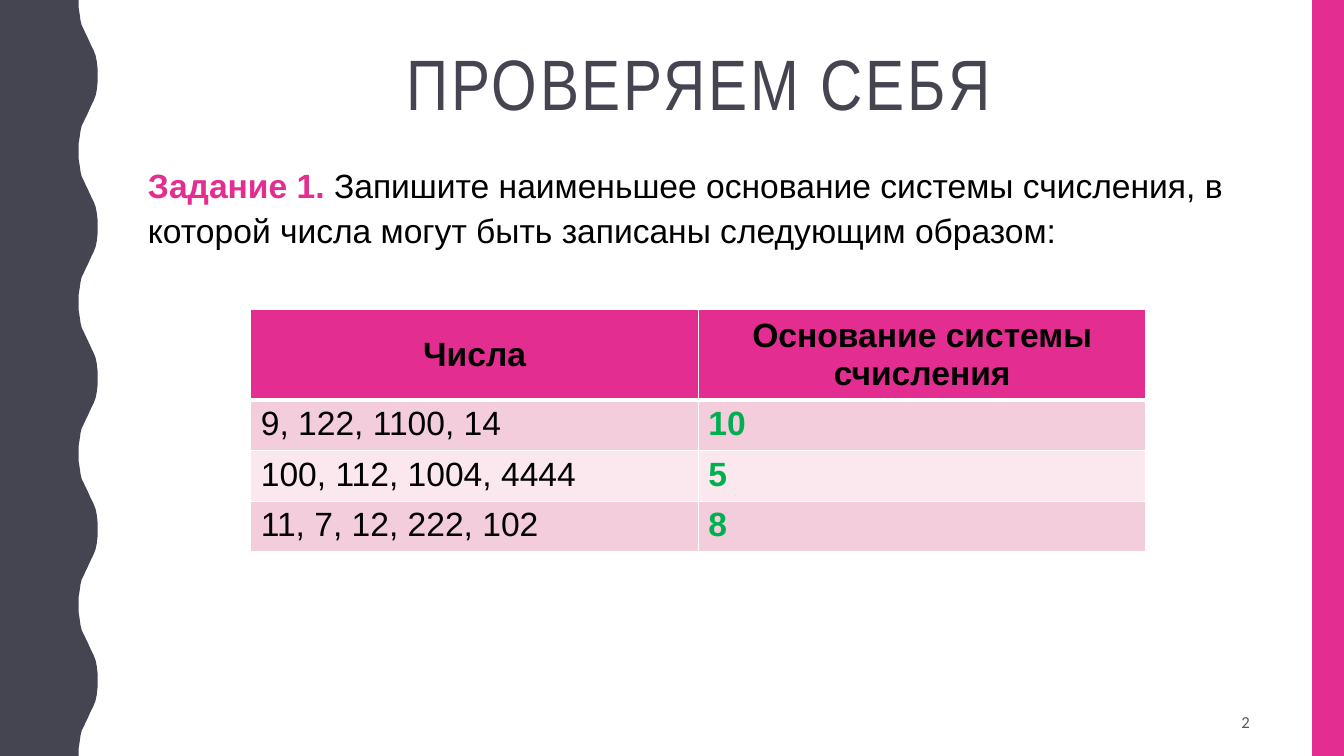
from lxml import etree
from pptx import Presentation
from pptx.dml.color import RGBColor
from pptx.enum.shapes import MSO_SHAPE
from pptx.enum.text import MSO_ANCHOR, PP_ALIGN
from pptx.oxml.ns import qn
from pptx.util import Cm, Pt

RECT = MSO_SHAPE.RECTANGLE
TOP, MIDDLE = MSO_ANCHOR.TOP, MSO_ANCHOR.MIDDLE
LEFT, CENTER, RIGHT = PP_ALIGN.LEFT, PP_ALIGN.CENTER, PP_ALIGN.RIGHT
DARK = RGBColor(0x45, 0x45, 0x51)
PINK = RGBColor(0xE3, 0x2D, 0x91)
PALE = RGBColor(0xF4, 0xCD, 0xDC)
PALER = RGBColor(0xFA, 0xE8, 0xEE)
GREEN = RGBColor(0x00, 0xB0, 0x50)
GRAY = RGBColor(0x59, 0x59, 0x59)
BLACK = RGBColor(0, 0, 0)


def add_run(p, text, size, color, font="Arial", bold=False):
    r = p.add_run()
    r.text = text
    for name, value in {"size": Pt(size), "name": font, "bold": bold}.items():
        setattr(r.font, name, value)
    r.font.color.rgb = color
    return r


def add_text(left, top, width, height, anchor, align):
    tf = s.shapes.add_textbox(Cm(left), Cm(top), Cm(width), Cm(height)).text_frame
    tf.word_wrap = True
    tf.vertical_anchor = anchor
    p = tf.paragraphs[0]
    p.alignment = align
    return p


prs = Presentation()
prs.slide_width, prs.slide_height = Cm(33.87), Cm(19.05)
s = prs.slides.add_slide(prs.slide_layouts[6])

WAVE = 3.81
rise = [(1.98, 0), (1.98, 0.18), (2.01, 0.36), (2.03, 0.51), (2.06, 0.64),
        (2.11, 0.74), (2.16, 0.85), (2.21, 0.95), (2.26, 1.06), (2.31, 1.17),
        (2.36, 1.27), (2.41, 1.4), (2.44, 1.55), (2.46, 1.73), (2.46, 1.9)]
crest = rise + [(x, WAVE - y) for x, y in reversed(rise)]
edge = [(Cm(x), Cm(y + i * WAVE)) for i in range(5) for x, y in crest]
builder = s.shapes.build_freeform(0, 0)
builder.add_line_segments(edge + [(0, prs.slide_height)], close=True)
wave = builder.convert_to_shape()
stripe = s.shapes.add_shape(RECT, Cm(33.07), 0, Cm(0.8), prs.slide_height)
for sp, color in ((wave, DARK), (stripe, PINK)):
    sp.shadow.inherit = False
    sp.fill.solid()
    sp.fill.fore_color.rgb = color
    sp.line.fill.background()

p = add_text(3.48, 1.07, 28.27, 2.24, MIDDLE, CENTER)
p.line_spacing = 0.9
r = add_run(p, "ПРОВЕРЯЕМ СЕБЯ", 51, DARK, "Arial Narrow")
r.font._element.set("spc", "200")

p = add_text(3.48, 3.94, 28.27, 2.31, TOP, LEFT)
p.line_spacing = 1.1
p.space_before = Pt(7)
add_run(p, "Задание 1. ", 24, PINK, bold=True)
add_run(p, "Запишите наименьшее основание системы счисления, "
           "в которой числа могут быть записаны следующим образом:", 24, BLACK)

rows = [("Числа", "Основание системы счисления"),
        ("9, 122, 1100, 14", "10"),
        ("100, 112, 1004, 4444", "5"),
        ("11, 7, 12, 222, 102", "8")]
table = s.shapes.add_table(4, 2, Cm(6.32), Cm(7.8), Cm(22.56), Cm(5.72)).table
for i, row in enumerate(rows):
    header = i == 0
    table.rows[i].height = Cm(2.12 if header else 1.2)
    for j, text in enumerate(row):
        cell = table.cell(i, j)
        cell.vertical_anchor = MIDDLE if header else TOP
        cell.fill.solid()
        cell.fill.fore_color.rgb = PINK if header else PALE if i % 2 else PALER
        p = cell.text_frame.paragraphs[0]
        p.alignment = CENTER if header else LEFT
        answer = j == 1 and not header
        add_run(p, text, 24, GREEN if answer else BLACK, bold=header or answer)
        tcPr = cell._tc.get_or_add_tcPr()
        for k, side in enumerate(("lnL", "lnR", "lnT", "lnB")):
            thick = (header and side == "lnB") or (i == 1 and side == "lnT")
            ln = etree.Element(qn("a:" + side), w=str(Pt(3 if thick else 1)))
            fill = etree.SubElement(ln, qn("a:solidFill"))
            etree.SubElement(fill, qn("a:srgbClr"), val="FFFFFF")
            tcPr.insert(k, ln)

p = add_text(23.93, 17.7, 7.82, 0.97, MIDDLE, RIGHT)
add_run(p, "2", 12, GRAY, "Calibri")

prs.save("out.pptx")
